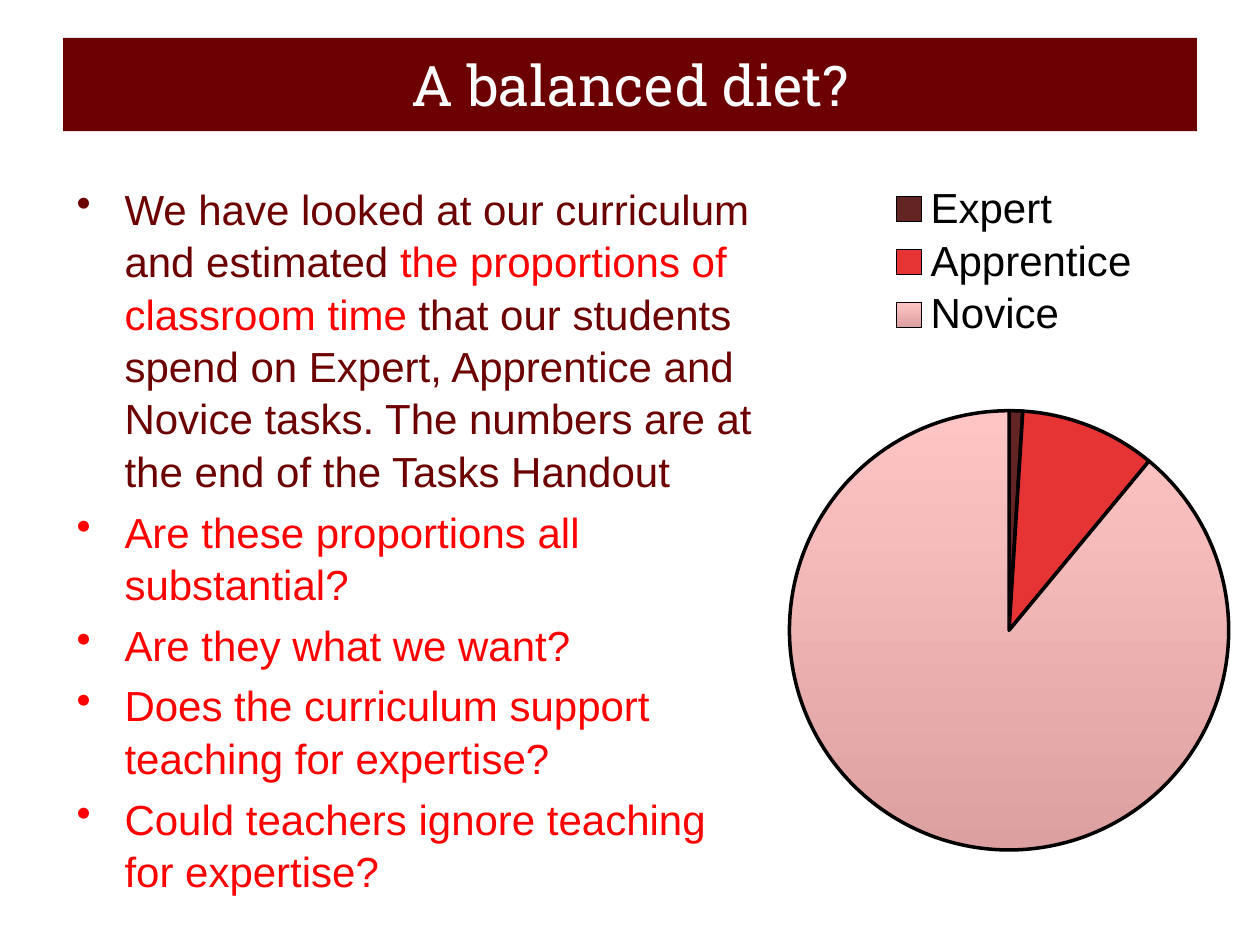
import pptx
import pptx.chart.data
import pptx.dml.color
import pptx.enum.chart
import pptx.enum.text
import pptx.oxml
import pptx.oxml.ns
import pptx.util
from lxml import etree
from pptx.util import Inches, Pt

THEME = {
    "maroon": "6C0000", "red": "FF0000", "white": "FFFFFF", "black": "000000",
    "title_font": "Roboto Slab", "body_font": "Arial", "chart_font": "Times New Roman",
    "title_size": 32, "body_size": 24, "chart_size": 18,
}
TITLE = "A balanced diet?"
BULLETS = [
    [("We have looked at our curriculum and estimated ", "maroon"),
     ("the proportions of classroom time", "red"),
     (" that our students spend on Expert, Apprentice and Novice tasks. "
      "The numbers are at the end of the Tasks Handout", "maroon")],
    [("Are these proportions all substantial?", "red")],
    [("Are they what we want?", "red")],
    [("Does the curriculum support teaching for expertise?", "red")],
    [("Could teachers ignore teaching for expertise?", "red")],
]
TASKS = [
    ("Expert", 1, ["632523"]),
    ("Apprentice", 10, ["E63333"]),
    ("Novice", 89, ["FFC5C5", "DDA0A0"]),
]
LEGEND_LAYOUT = {"x": 0.24, "y": 0.02, "w": 0.55, "h": 0.22}
PIE_LAYOUT = {"x": 0.04, "y": 0.33, "w": 0.93, "h": 0.59}


def rgb(value):
    return pptx.dml.color.RGBColor.from_string(value)


def style_font(font, name, size, color):
    font.name = name
    font.size = Pt(size)
    font.color.rgb = rgb(color)


def add_title(slide):
    title = slide.shapes.title
    title.left, title.top = Inches(0.5), Inches(0.3)
    title.width, title.height = Inches(9), Inches(0.74)
    title.fill.solid()
    title.fill.fore_color.rgb = rgb(THEME["maroon"])
    title.text_frame.text = TITLE
    title.text_frame.vertical_anchor = pptx.enum.text.MSO_ANCHOR.MIDDLE
    paragraph = title.text_frame.paragraphs[0]
    paragraph.alignment = pptx.enum.text.PP_ALIGN.CENTER
    style_font(paragraph.font, THEME["title_font"], THEME["title_size"], THEME["white"])


def add_bullets(slide):
    box = slide.shapes.add_textbox(Inches(0.51), Inches(1.39), Inches(5.59), Inches(5.59))
    frame = box.text_frame
    frame.word_wrap = True
    for index, parts in enumerate(BULLETS):
        paragraph = frame.add_paragraph() if index else frame.paragraphs[0]
        paragraph.space_before = Pt(0.2 * THEME["body_size"])
        paragraph.line_spacing = 1.04
        properties = paragraph._p.get_or_add_pPr()
        properties.set("marL", str(Inches(0.38)))
        properties.set("indent", str(-Inches(0.38)))
        bullet = etree.SubElement(properties, pptx.oxml.ns.qn("a:buChar"))
        bullet.set("char", "•")
        for text, color in parts:
            run = paragraph.add_run()
            run.text = text
            style_font(run.font, THEME["body_font"], THEME["body_size"], THEME[color])


def set_layout(element, values, inner=False):
    tag = pptx.oxml.ns.qn
    for old in element.findall(tag("c:layout")):
        element.remove(old)
    layout = etree.Element(tag("c:layout"))
    manual = etree.SubElement(layout, tag("c:manualLayout"))
    settings = [("layoutTarget", "inner")] if inner else []
    settings += [("xMode", "edge"), ("yMode", "edge"), *values.items()]
    for name, value in settings:
        etree.SubElement(manual, tag(f"c:{name}")).set("val", str(value))
    if inner:
        element.insert(0, layout)
    else:
        element.find(tag("c:legendPos")).addnext(layout)


def add_pie(slide):
    data = pptx.chart.data.CategoryChartData()
    data.categories = [name for name, _, _ in TASKS]
    data.add_series("Series 1", [value for _, value, _ in TASKS])
    chart = slide.shapes.add_chart(
        pptx.enum.chart.XL_CHART_TYPE.PIE,
        Inches(6.1), Inches(1.31), Inches(3.78), Inches(5.91), data).chart
    style_font(chart.font, THEME["chart_font"], THEME["chart_size"], THEME["black"])
    chart.has_title = False
    chart.has_legend = True
    chart.legend.position = pptx.enum.chart.XL_LEGEND_POSITION.TOP
    chart.legend.include_in_layout = False
    style_font(chart.legend.font, THEME["body_font"], THEME["body_size"], THEME["black"])
    set_layout(chart.legend._element, LEGEND_LAYOUT)
    set_layout(chart._chartSpace.chart.plotArea, PIE_LAYOUT, inner=True)
    plot = chart.plots[0]
    plot.vary_by_categories = True
    for index, (_, _, colors) in enumerate(TASKS):
        form = plot.series[0].points[index].format
        form.line.color.rgb = rgb(THEME["black"])
        form.line.width = Pt(2)
        if len(colors) == 1:
            form.fill.solid()
            form.fill.fore_color.rgb = rgb(colors[0])
        else:
            form.fill.gradient()
            form.fill.gradient_angle = 270
            for stop, color in zip(form.fill.gradient_stops, colors):
                stop.color.rgb = rgb(color)


def main():
    presentation = pptx.Presentation()
    presentation.slide_width, presentation.slide_height = Inches(10), Inches(7.5)
    slide = presentation.slides.add_slide(presentation.slide_layouts[5])
    add_title(slide)
    add_bullets(slide)
    add_pie(slide)
    presentation.save("out.pptx")


if __name__ == "__main__":
    main()
